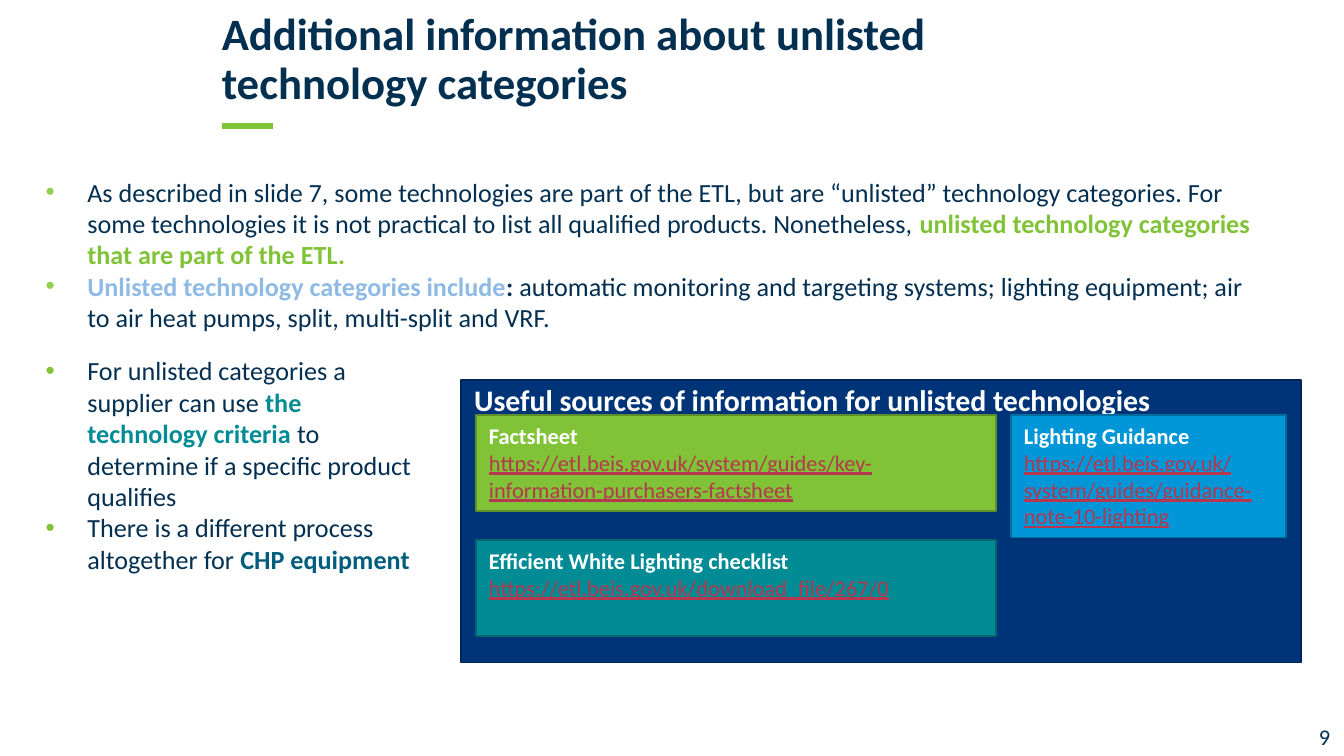
from typing import NamedTuple

from lxml.etree import SubElement
from pptx import Presentation
from pptx.dml.color import RGBColor
from pptx.enum.shapes import MSO_CONNECTOR, MSO_SHAPE
from pptx.enum.text import MSO_ANCHOR, MSO_AUTO_SIZE, PP_ALIGN
from pptx.oxml.ns import qn
from pptx.util import Inches, Pt

INK, NAVY, WHITE = "032F51", "003478", "FFFFFF"
GREEN, TEAL, BLUE, LINK = "80C337", "008B95", "0096D7", "B5384F"


class Run(NamedTuple):
    text: str
    color: str = INK
    bold: bool = False
    under: bool = False


class Box(NamedTuple):
    left: float
    top: float
    width: float
    height: float


class Card(NamedTuple):
    box: Box
    fill: str
    edge: str
    head: str
    link: str


def rgb(color: str) -> RGBColor:
    return RGBColor.from_string(color)


def place(shape, box: Box) -> None:
    shape.left, shape.top, shape.width, shape.height = map(Inches, box)


def setup(frame, anchor=MSO_ANCHOR.TOP, inset: bool = True) -> None:
    frame.word_wrap = True
    frame.auto_size = MSO_AUTO_SIZE.NONE
    frame.vertical_anchor = anchor
    if not inset:
        frame.margin_left = frame.margin_right = 0
        frame.margin_top = frame.margin_bottom = 0


def write(para, runs: list[Run], size: int, align=PP_ALIGN.LEFT) -> None:
    para.alignment = align
    para.space_before = Pt(0)
    for item in runs:
        run = para.add_run()
        run.text = item.text
        font = run.font
        font.name, font.size = "Calibri", Pt(size)
        font.bold, font.underline = item.bold, item.under
        font.color.rgb = rgb(item.color)


def fill_text(frame, rows: list[list[Run]], size: int) -> None:
    for i, runs in enumerate(rows):
        para = frame.add_paragraph() if i else frame.paragraphs[0]
        write(para, runs, size)


def add_list(holder, box: Box, dot: str, rows: list[list[Run]]) -> None:
    place(holder, box)
    frame = holder.text_frame
    setup(frame)
    fill_text(frame, rows, 14)
    for para in frame.paragraphs:
        props = para._p.get_or_add_pPr()
        props.set("marL", str(Inches(0.31)))
        props.set("indent", str(Inches(-0.31)))
        tint = SubElement(props, qn("a:buClr"))
        SubElement(tint, qn("a:srgbClr"), val=dot)
        SubElement(props, qn("a:buFont"), typeface="Arial")
        SubElement(props, qn("a:buChar"), char="•")


def add_rect(shapes, box: Box, fill: str, edge: str):
    rect = shapes.add_shape(MSO_SHAPE.RECTANGLE, *map(Inches, box))
    rect.shadow.inherit = False
    rect.fill.solid()
    rect.fill.fore_color.rgb = rgb(fill)
    rect.line.color.rgb = rgb(edge)
    rect.line.width = Pt(1)
    return rect


def add_card(shapes, card: Card) -> None:
    frame = add_rect(shapes, card.box, card.fill, card.edge).text_frame
    setup(frame)
    fill_text(frame, [[Run(card.head, WHITE, True)],
                      [Run(card.link, LINK, under=True)]], 12)


# Widescreen slide, 16:9
deck = Presentation()
deck.slide_width = Inches(10)
deck.slide_height = Inches(10 * 9 / 16)
slide = deck.slides.add_slide(deck.slide_layouts[3])
shapes = slide.shapes

# Title and accent rule
title = shapes.title
place(title, Box(1.65, 0.11, 8.03, 0.7))
setup(title.text_frame, MSO_ANCHOR.BOTTOM, inset=False)
para = title.text_frame.paragraphs[0]
para.line_spacing = 0.9
write(para, [Run("Additional information about unlisted ", bold=True)], 24)
para.add_line_break()
write(para, [Run("technology categories", bold=True)], 24)

rule = shapes.add_connector(MSO_CONNECTOR.STRAIGHT, Inches(1.65), Inches(0.94),
                            Inches(2.03), Inches(0.94))
rule.line.color.rgb = rgb(GREEN)
rule.line.width = Pt(3)
SubElement(rule._element.spPr, qn("a:effectLst"))

# Bullet lists
add_list(slide.placeholders[1], Box(0.24, 1.26, 9.28, 1.28), "92D050", [
    [Run("As described in slide 7, some technologies are part of the ETL, but "
         "are “unlisted” technology categories. For some technologies it is not "
         "practical to list all qualified products. Nonetheless, "),
     Run("unlisted technology categories that are part of the ETL.", GREEN, True)],
    [Run("Unlisted technology categories include", "8EBAE5", True),
     Run(": ", bold=True),
     Run("automatic monitoring and targeting systems; lighting equipment; "
         "air to air heat pumps, split, multi-split and VRF.")],
])
add_list(slide.placeholders[2], Box(0.24, 2.59, 3.01, 1.75), GREEN, [
    [Run("For unlisted categories a supplier can use "),
     Run("the technology criteria ", TEAL, True),
     Run("to determine if a specific product qualifies")],
    [Run("There is a different process altogether for "),
     Run("CHP equipment", "005D7E", True)],
])

# Panel of sources
panel = shapes.add_group_shape().shapes
add_rect(panel, Box(3.43, 2.83, 6.25, 2.1), NAVY, "002659")
head = panel.add_textbox(*map(Inches, Box(3.43, 2.79, 6.37, 0.3))).text_frame
setup(head)
fill_text(head, [[Run("Useful sources of information for unlisted technologies",
                      WHITE, True)]], 16)

SITE = "https://etl.beis.gov.uk/"
for card in (
    Card(Box(3.54, 3.09, 3.87, 0.71), GREEN, "5F9029", "Factsheet",
         SITE + "system/guides/key-information-purchasers-factsheet"),
    Card(Box(3.54, 4.02, 3.87, 0.71), TEAL, "00676E",
         "Efficient White Lighting checklist", SITE + "download_file/267/0"),
    Card(Box(7.52, 3.09, 2.05, 0.91), BLUE, "006F9F", "Lighting Guidance",
         SITE + "system/guides/guidance-note-10-lighting"),
):
    add_card(panel, card)

# Page number
page = shapes.add_textbox(*map(Inches, Box(9.71, 5.33, 0.29, 0.3))).text_frame
setup(page, MSO_ANCHOR.MIDDLE, inset=False)
write(page.paragraphs[0], [Run("9")], 12, PP_ALIGN.CENTER)

deck.save("out.pptx")
